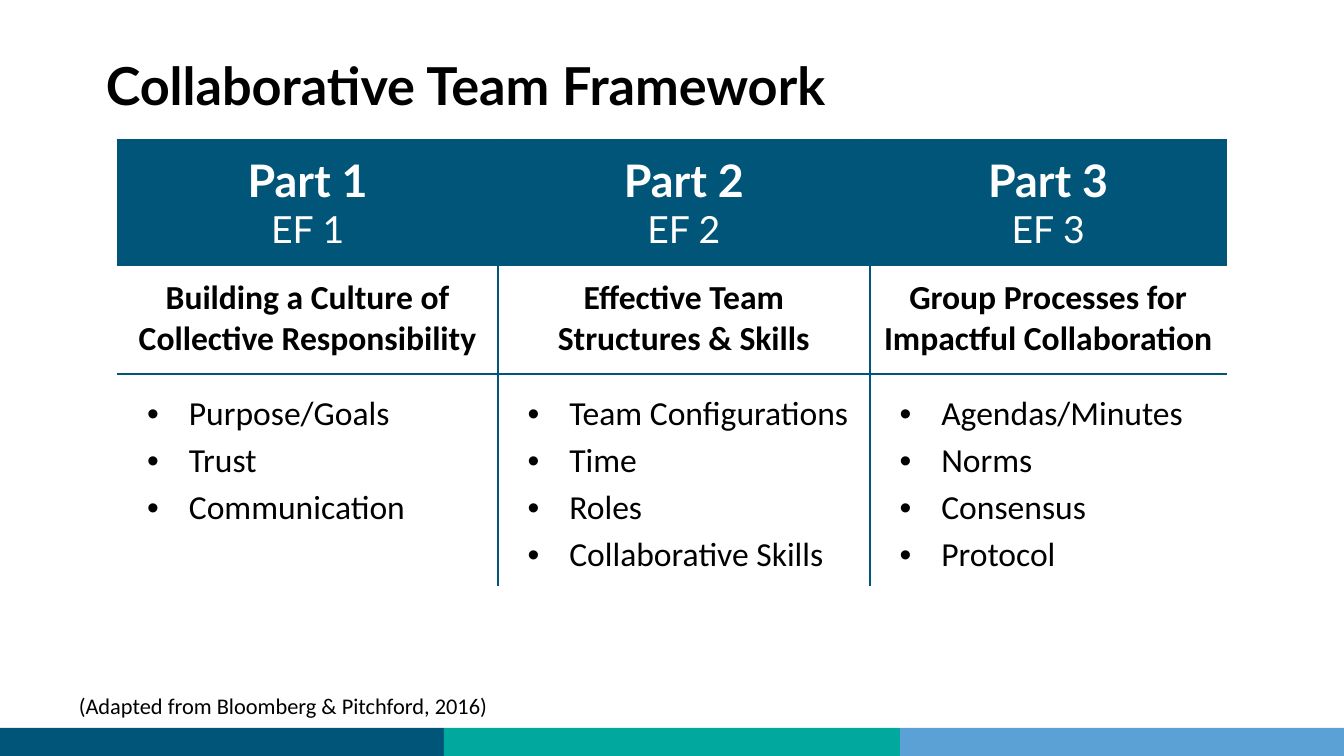
from lxml import etree
from pptx import Presentation
from pptx.dml.color import RGBColor
from pptx.enum import shapes, text
from pptx.oxml import ns
from pptx.util import Cm, Pt

NAVY, TEAL, SKY, WHITE, BLACK = "005579", "00A89E", "5CA1D6", "FFFFFF", "000000"
INSET = 0.25
PARTS = [
    ("Part 1", "EF 1", ["Building a Culture of", "Collective Responsibility"],
     ["Purpose/Goals", "Trust", "Communication"]),
    ("Part 2", "EF 2", ["Effective Team", "Structures & Skills"],
     ["Team Configurations", "Time", "Roles", "Collaborative Skills"]),
    ("Part 3", "EF 3", ["Group Processes for Impactful Collaboration"],
     ["Agendas/Minutes", "Norms", "Consensus", "Protocol"]),
]


def color(value):
    """Turn a hex string into a colour."""
    return RGBColor.from_string(value)


def add_child(parent, tag, **attributes):
    """Append a DrawingML element and return it."""
    return etree.SubElement(parent, ns.qn(f"a:{tag}"), attributes)


def write(frame, content, size=18, font="Calibri", fill=BLACK, bold=False,
          align=None, bullet=False):
    """Write one formatted paragraph, reusing the first one while it is empty."""
    paragraph = frame.paragraphs[0]
    if paragraph.runs:
        paragraph = frame.add_paragraph()
    if align is not None:
        paragraph.alignment = align
    if bullet:
        paragraph.line_spacing = 1.15
        properties = paragraph._p.get_or_add_pPr()
        properties.set("marL", str(Cm(1.1)))
        properties.set("indent", str(Cm(-0.79)))
        add_child(add_child(properties, "buClr"), "srgbClr", val=fill)
        add_child(properties, "buFont", typeface="Arial")
        add_child(properties, "buChar", char="•")
    run = paragraph.add_run()
    run.text = content
    run.font.size, run.font.name, run.font.bold = Pt(size), font, bold
    run.font.color.rgb = color(fill)


def add_bar(slide, left, width, fill):
    """Add one coloured bar along the bottom edge."""
    bar = slide.shapes.add_shape(shapes.MSO_SHAPE.RECTANGLE, Cm(left), Cm(13.76),
                                 Cm(width), Cm(0.53))
    bar.shadow.inherit = False
    bar.fill.solid()
    bar.fill.fore_color.rgb = color(fill)
    bar.line.fill.background()


def add_text_box(slide, left, top, width, height, inset, content, **style):
    """Add a wrapping text box with one paragraph."""
    box = slide.shapes.add_textbox(Cm(left), Cm(top), Cm(width), Cm(height))
    frame = box.text_frame
    frame.word_wrap = True
    frame.margin_top = frame.margin_bottom = Cm(inset)
    write(frame, content, **style)


def style_cell(cell, sides, fill=None):
    """Set margins, fill and the visible borders of a cell."""
    cell.margin_left = cell.margin_right = Cm(INSET)
    cell.margin_top = cell.margin_bottom = Cm(INSET)
    properties = cell._tc.get_or_add_tcPr()
    for side in "LRTB":
        line = add_child(properties, f"ln{side}", w=str(Pt(1)))
        if side in sides:
            add_child(add_child(line, "solidFill"), "srgbClr", val=NAVY)
        else:
            add_child(line, "noFill")
    if fill:
        cell.fill.solid()
        cell.fill.fore_color.rgb = color(fill)
    else:
        cell.fill.background()


def add_framework(slide):
    """Add the table with one column for each part."""
    widths, heights = [7.19, 7.03, 6.74], [2.34, 2.06, 4.01]
    frame = slide.shapes.add_table(len(heights), len(widths), Cm(2.22), Cm(2.64),
                                   Cm(sum(widths)), Cm(sum(heights)))
    table = frame.table
    table.first_row = table.horz_banding = False
    for row, height in zip(table.rows, heights):
        row.height = Cm(height)
    center = text.PP_ALIGN.CENTER
    for index, (part, code, theme, topics) in enumerate(PARTS):
        table.columns[index].width = Cm(widths[index])
        header, subject, body = (table.cell(row, index) for row in range(3))
        inner = ("L" if index > 0 else "") + ("R" if index < len(PARTS) - 1 else "")
        style_cell(header, "LRTB", NAVY)
        style_cell(subject, inner + "TB")
        style_cell(body, inner + "T")
        write(header.text_frame, part, size=24, font="Lato", fill=WHITE, bold=True,
              align=center)
        write(header.text_frame, code, size=20, font="Lato", fill=WHITE, align=center)
        for line in theme:
            write(subject.text_frame, line, bold=True, align=center)
        for topic in topics:
            write(body.text_frame, topic, bullet=True)


def main():
    """Build and save the slide."""
    presentation = Presentation()
    presentation.slide_width, presentation.slide_height = Cm(25.4), Cm(14.29)
    slide = presentation.slides.add_slide(presentation.slide_layouts[6])
    for left, width, fill in [(0, 8.39, NAVY), (8.39, 8.62, TEAL), (17.01, 8.39, SKY)]:
        add_bar(slide, left, width, fill)
    add_text_box(slide, 1.75, 0.76, 21.9, 2.29, INSET, "Collaborative Team Framework",
                 size=28, font="Lato", bold=True)
    add_framework(slide)
    add_text_box(slide, 1.24, 12.95, 21.77, 0.77, 0.13,
                 "(Adapted from Bloomberg & Pitchford, 2016)", size=12)
    presentation.save("out.pptx")


if __name__ == "__main__":
    main()
